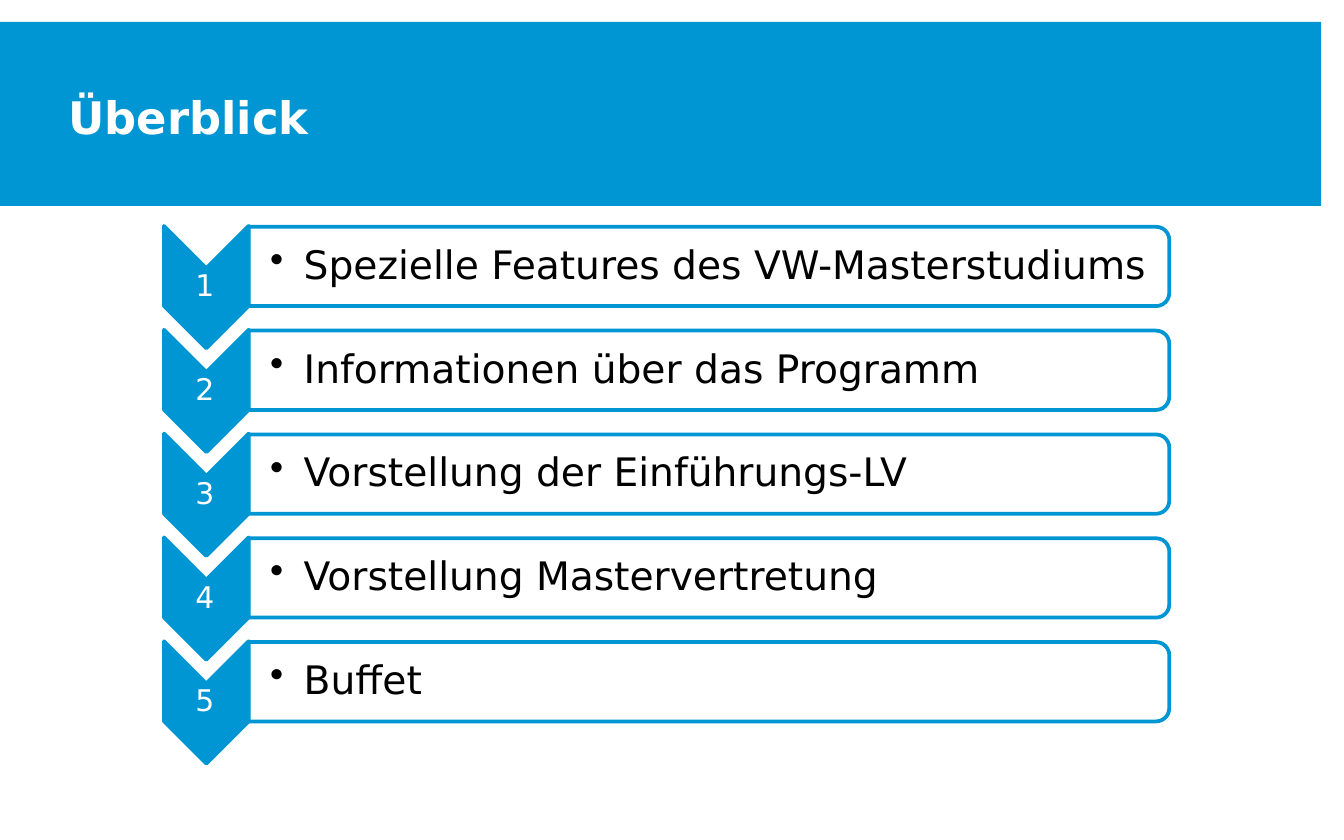
from lxml import etree
from pptx import Presentation
from pptx.dml.color import RGBColor
from pptx.enum.shapes import MSO_SHAPE
from pptx.enum.text import MSO_ANCHOR, MSO_AUTO_SIZE, PP_ALIGN
from pptx.oxml.ns import qn
from pptx.util import Inches, Pt

BLUE = RGBColor(0x00, 0x96, 0xD3)
WHITE = RGBColor(0xFF, 0xFF, 0xFF)
BLACK = RGBColor(0x00, 0x00, 0x00)
FONT = "DejaVu Sans"
RECTANGLE, CHEVRON = MSO_SHAPE.RECTANGLE, MSO_SHAPE.CHEVRON
TWO_ROUND_CORNERS = MSO_SHAPE.ROUND_2_SAME_RECTANGLE
MIDDLE, NO_FIT = MSO_ANCHOR.MIDDLE, MSO_AUTO_SIZE.NONE
LEFT, CENTER = PP_ALIGN.LEFT, PP_ALIGN.CENTER
TITLE_ONLY = 5

TOPICS = [
    "Spezielle Features des VW-Masterstudiums",
    "Informationen über das Programm",
    "Vorstellung der Einführungs-LV",
    "Vorstellung Mastervertretung",
    "Buffet",
]
ROW_STEP = 12.36


class SlideBuilder:
    """Draws on one slide; areas are (left, top, width, height) in percent of it."""

    def __init__(self, deck):
        self.deck = deck
        self.slide = deck.slides.add_slide(deck.slide_layouts[TITLE_ONLY])

    def measure(self, area):
        sides = (self.deck.slide_width, self.deck.slide_height) * 2
        return [round(side * share / 100) for side, share in zip(sides, area)]

    def set_text(self, box, text, size, color, align, margin=0, bold=False):
        frame = box.text_frame
        frame.text = text
        frame.word_wrap = True
        frame.auto_size = NO_FIT
        frame.vertical_anchor = MIDDLE
        frame.margin_left = frame.margin_right = Inches(margin)
        frame.margin_top = frame.margin_bottom = Inches(margin)
        para = frame.paragraphs[0]
        para.alignment = align
        font = para.runs[0].font
        font.name, font.size, font.bold = FONT, Pt(size), bold
        font.color.rgb = color
        return para

    def title(self, text, area):
        title = self.slide.shapes.title
        title.left, title.top, title.width, title.height = self.measure(area)
        self.set_text(title, text, 24, WHITE, LEFT, bold=True)

    def band(self, area):
        band = self.slide.shapes.add_shape(RECTANGLE, *self.measure(area))
        band.shadow.inherit = False
        band.fill.solid()
        band.fill.fore_color.rgb = BLUE
        band.line.fill.background()
        self.slide.shapes.title.element.addprevious(band.element)

    def turned_shape(self, kind, area, fill):
        """Adds a shape turned by 90 degrees that covers the area once turned."""
        left, top, width, height = self.measure(area)
        shift = (width - height) // 2
        shape = self.slide.shapes.add_shape(
            kind, left + shift, top - shift, height, width)
        shape.rotation = 90
        shape.shadow.inherit = False
        shape.fill.solid()
        shape.fill.fore_color.rgb = fill
        shape.line.color.rgb = BLUE
        shape.line.width = Pt(2)
        return shape

    def number(self, text, area):
        box = self.slide.shapes.add_textbox(*self.measure(area))
        para = self.set_text(box, text, 16, WHITE, CENTER, margin=0.01)
        para.line_spacing = 0.9

    def bullet(self, text, area):
        box = self.slide.shapes.add_textbox(*self.measure(area))
        para = self.set_text(box, text, 21, BLACK, LEFT, margin=0.01)
        box.text_frame.margin_left = Inches(0.16)
        para.line_spacing = 0.9
        properties = para._p.get_or_add_pPr()
        properties.set("marL", str(Inches(0.25)))
        properties.set("indent", str(-Inches(0.25)))
        etree.SubElement(properties, qn("a:buChar")).set("char", "•")

    def topic(self, index, text):
        offset = index * ROW_STEP
        self.turned_shape(CHEVRON, (12.2, 26.9 + offset, 6.3, 14.56), BLUE)
        self.number(str(index + 1), (12.1, 32 + offset, 6.3, 4.32))
        panel = self.turned_shape(
            TWO_ROUND_CORNERS, (18.5, 27 + offset, 68.5, 9.44), WHITE)
        color = panel.element.spPr.find(qn("a:solidFill"))[0]
        etree.SubElement(color, qn("a:alpha")).set("val", "90000")
        self.bullet(text, (18.5, 27.5 + offset, 68.2, 8.48))


def main():
    deck = Presentation()
    deck.slide_width, deck.slide_height = Inches(10), Inches(6.25)
    builder = SlideBuilder(deck)
    builder.band((0, 2.6, 98.3, 21.9))
    builder.title("Überblick", (5.1, 5.6, 68.7, 16.6))
    for index, text in enumerate(TOPICS):
        builder.topic(index, text)
    deck.save("out.pptx")


if __name__ == "__main__":
    main()
